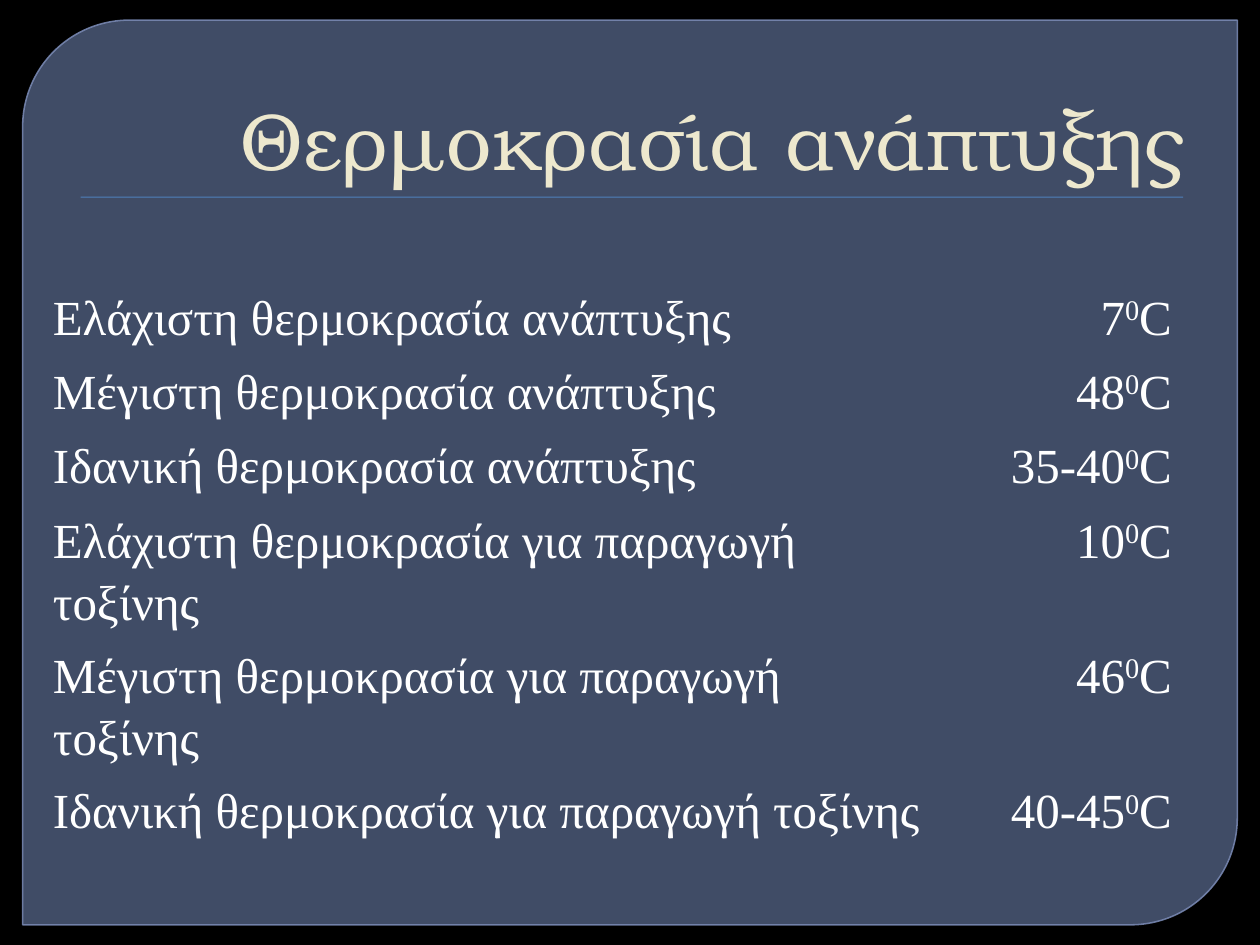
from typing import NamedTuple

from lxml.etree import SubElement
from pptx import Presentation
from pptx.dml.color import RGBColor
from pptx.enum.shapes import MSO_SHAPE
from pptx.enum.text import MSO_ANCHOR, PP_ALIGN
from pptx.oxml.ns import qn
from pptx.util import Inches, Pt

BLACK = RGBColor(0x00, 0x00, 0x00)
WHITE = RGBColor(0xFF, 0xFF, 0xFF)
CREAM = RGBColor(0xED, 0xE8, 0xCE)
PANEL_FILL = RGBColor(0x63, 0x75, 0x9D)
PANEL_LINE = RGBColor(0x79, 0x89, 0xB3)
RULE_BLUE = RGBColor(0x4F, 0x81, 0xBD)

WIDTH, HEIGHT = Inches(10), Inches(7.5)
ROW_HEIGHT = Inches(0.59)
COLUMN_WIDTHS = (Inches(7.17), Inches(1.85))
NO_GRID_STYLE = "{2D5ABB26-0587-4C30-8999-92F81FD0307C}"


class Area(NamedTuple):
    """A rectangle in percent of the slide's width and height."""
    left: float
    top: float
    width: float
    height: float

    def lengths(self) -> tuple:
        sides = (WIDTH, HEIGHT, WIDTH, HEIGHT)
        return tuple(int(side * share / 100) for side, share in zip(sides, self))


class Reading(NamedTuple):
    label: str
    degrees: str


PANEL = Area(1.8, 2.13, 96.4, 95.73)
RULE = Area(6.4, 20.8, 87.5, 0.13)
TITLE = Area(5, 3.73, 90, 16.67)
TABLE = Area(3.5, 30, 90.2, 47.2)

READINGS = (
    Reading("Ελάχιστη θερμοκρασία ανάπτυξης", "7"),
    Reading("Μέγιστη θερμοκρασία ανάπτυξης", "48"),
    Reading("Ιδανική θερμοκρασία ανάπτυξης", "35-40"),
    Reading("Ελάχιστη θερμοκρασία για παραγωγή τοξίνης", "10"),
    Reading("Μέγιστη θερμοκρασία για παραγωγή τοξίνης", "46"),
    Reading("Ιδανική θερμοκρασία για παραγωγή τοξίνης", "40-45"),
)


def set_opacity(fill_parent, percent: int) -> None:
    color = fill_parent.find(qn("a:solidFill"))[0]
    SubElement(color, qn("a:alpha")).set("val", str(percent * 1000))


def add_panel(page) -> None:
    panel = page.shapes.add_shape(MSO_SHAPE.ROUND_2_DIAG_RECTANGLE, *PANEL.lengths())
    panel.shadow.inherit = False
    panel.adjustments[0], panel.adjustments[1] = 0.118, 0
    panel.fill.solid()
    panel.fill.fore_color.rgb = PANEL_FILL
    panel.line.color.rgb = PANEL_LINE
    panel.line.width = Pt(0.87)
    properties = panel._element.spPr
    set_opacity(properties, 65)
    set_opacity(properties.find(qn("a:ln")), 88)


def add_rule(page) -> None:
    rule = page.shapes.add_shape(MSO_SHAPE.RECTANGLE, *RULE.lengths())
    rule.shadow.inherit = False
    rule.fill.solid()
    rule.fill.fore_color.rgb = RULE_BLUE
    rule.line.fill.background()


def format_span(span, font: str, size: int, color: RGBColor) -> None:
    span.font.name = font
    span.font.size = Pt(size)
    span.font.color.rgb = color


def add_title(page, text: str) -> None:
    box = page.shapes.add_textbox(*TITLE.lengths())
    frame = box.text_frame
    frame.word_wrap = True
    frame.vertical_anchor = MSO_ANCHOR.BOTTOM
    frame.text = text
    para = frame.paragraphs[0]
    para.alignment = PP_ALIGN.RIGHT
    format_span(para.runs[0], "TeX Gyre Bonum", 46, CREAM)


def fill_cell(cell, pieces: tuple, alignment: PP_ALIGN) -> None:
    """Write the pieces in turn; every second one is raised."""
    cell.fill.background()
    cell.margin_left = cell.margin_right = Inches(0.07)
    cell.margin_top = cell.margin_bottom = 0
    para = cell.text_frame.paragraphs[0]
    para.alignment = alignment
    para.line_spacing = 1.15
    for index, piece in enumerate(pieces):
        span = para.add_run()
        span.text = piece
        format_span(span, "Times New Roman", 28, WHITE)
        if index % 2:
            span.font._element.set("baseline", "30000")


def add_readings(page) -> None:
    table = page.shapes.add_table(len(READINGS), 2, *TABLE.lengths()).table
    table.first_row = table.horz_banding = False
    table._tbl.tblPr.find(qn("a:tableStyleId")).text = NO_GRID_STYLE
    for column, width in zip(table.columns, COLUMN_WIDTHS):
        column.width = width
    for row, reading in zip(table.rows, READINGS):
        row.height = ROW_HEIGHT
        label, value = row.cells
        fill_cell(label, (reading.label,), PP_ALIGN.LEFT)
        fill_cell(value, (reading.degrees, "0", "C"), PP_ALIGN.RIGHT)


def main() -> None:
    deck = Presentation()
    deck.slide_width, deck.slide_height = WIDTH, HEIGHT
    page = deck.slides.add_slide(deck.slide_layouts[6])
    page.background.fill.solid()
    page.background.fill.fore_color.rgb = BLACK
    add_panel(page)
    add_rule(page)
    add_title(page, "Θερμοκρασία ανάπτυξης")
    add_readings(page)
    deck.save("out.pptx")


if __name__ == "__main__":
    main()
